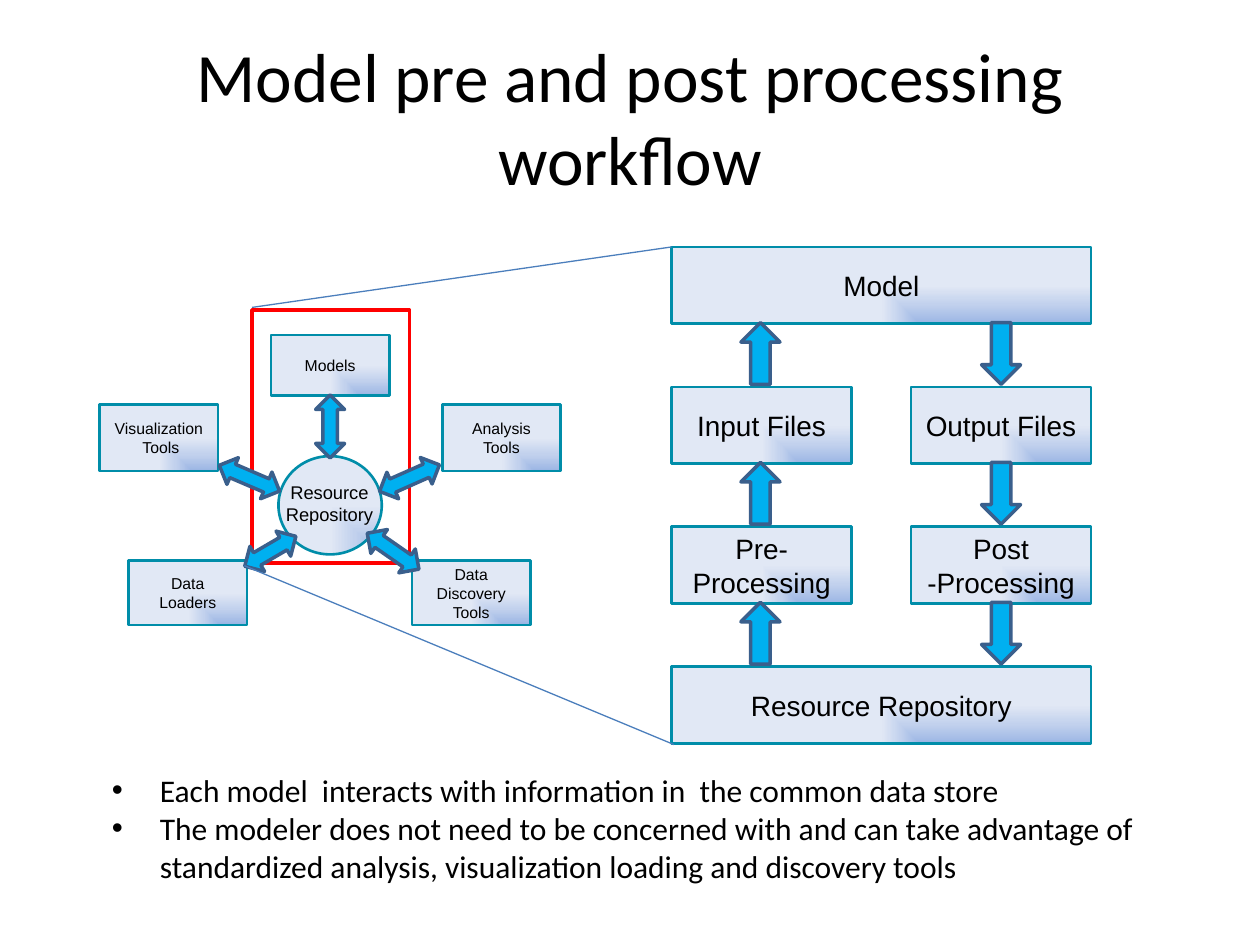
import dataclasses

import lxml.etree
import pptx
import pptx.dml.color
import pptx.enum.shapes
import pptx.enum.text
import pptx.oxml
import pptx.oxml.ns
import pptx.util

Inches = pptx.util.Inches
Pt = pptx.util.Pt
Shape = pptx.enum.shapes.MSO_SHAPE
Align = pptx.enum.text.PP_ALIGN
Anchor = pptx.enum.text.MSO_ANCHOR


@dataclasses.dataclass(frozen=True)
class Theme:
    text: str = "000000"
    box_stops: tuple = ((0, "9AB5E4"), (50, "C2D1ED"), (100, "E1E8F5"))
    box_line: str = "008DA9"
    arrow_fill: str = "00B0F0"
    arrow_line: str = "3A5F8C"
    highlight: str = "FF0000"
    callout: str = "4B7EBC"
    heading_font: str = "Calibri"
    diagram_font: str = "Arial"
    title_size: float = 39.6
    bullet_size: float = 18
    flow_size: float = 16
    hub_size: float = 10.5
    tool_size: float = 9


THEME = Theme()


def color(value):
    return pptx.dml.color.RGBColor.from_string(value)


def apply_format(target, values):
    for name, value in values.items():
        setattr(target, name, value)


def write_text(shape, lines, size, font, alignment=Align.CENTER,
               anchor=Anchor.MIDDLE, margin=0.1):
    frame = shape.text_frame
    apply_format(frame, {
        "word_wrap": True, "vertical_anchor": anchor,
        "margin_left": Inches(margin), "margin_right": Inches(margin),
    })
    frame.text = "\n".join(lines)
    for paragraph in frame.paragraphs:
        paragraph.alignment = alignment
        for run in paragraph.runs:
            apply_format(run.font, {"size": Pt(size), "name": font})
            run.font.color.rgb = color(THEME.text)


def add_text(slide, place, lines, size, font, **options):
    box = slide.shapes.add_textbox(*map(Inches, place))
    write_text(box, lines, size, font, **options)
    return box


def add_bullets(slide, place, lines):
    box = add_text(slide, place, lines, THEME.bullet_size, THEME.heading_font,
                   alignment=Align.LEFT, anchor=Anchor.TOP)
    for paragraph in box.text_frame.paragraphs:
        properties = paragraph._p.get_or_add_pPr()
        properties.set("marL", str(Inches(0.38)))
        properties.set("indent", str(-Inches(0.38)))
        for tag, name, value in (("a:buFont", "typeface", "Arial"), ("a:buChar", "char", "•")):
            bullet = lxml.etree.SubElement(properties, pptx.oxml.ns.qn(tag))
            bullet.set(name, value)


def add_outline(slide, kind, place, line_color, line_width):
    shape = slide.shapes.add_shape(kind, *map(Inches, place))
    shape.shadow.inherit = False
    shape.fill.background()
    shape.line.color.rgb = color(line_color)
    shape.line.width = Pt(line_width)
    return shape


def corner_gradient():
    stops = "".join(
        f'<a:gs pos="{position * 1000}"><a:srgbClr val="{value}"/></a:gs>'
        for position, value in THEME.box_stops)
    return pptx.oxml.parse_xml(
        f'<a:gradFill {pptx.oxml.ns.nsdecls("a")} rotWithShape="1"><a:gsLst>{stops}</a:gsLst>'
        '<a:path path="rect"><a:fillToRect l="100000" t="100000"/></a:path></a:gradFill>')


def add_node(slide, place, label="", size=THEME.flow_size, kind=Shape.RECTANGLE):
    shape = add_outline(slide, kind, place, THEME.box_line, 1.5)
    properties = shape._element.spPr
    properties.replace(properties.find(pptx.oxml.ns.qn("a:noFill")), corner_gradient())
    if label:
        write_text(shape, [label], size, THEME.diagram_font, margin=0.11)


def add_arrow(slide, kind, place, rotation=0):
    shape = add_outline(slide, kind, place, THEME.arrow_line, 2)
    shape.fill.solid()
    shape.fill.fore_color.rgb = color(THEME.arrow_fill)
    shape.rotation = rotation


def add_callout_line(slide, *ends):
    line = slide.shapes.add_connector(
        pptx.enum.shapes.MSO_CONNECTOR.STRAIGHT, *map(Inches, ends))
    line.line.color.rgb = color(THEME.callout)
    line.line.width = Pt(0.75)
    lxml.etree.SubElement(line._element.spPr, pptx.oxml.ns.qn("a:effectLst"))


def add_hub_diagram(slide):
    add_outline(slide, Shape.RECTANGLE, (2, 2.46, 1.25, 2.01), THEME.highlight, 2)
    for left, top, height, label in (
        (3.51, 3.21, 0.53, "Analysis Tools"),
        (0.79, 3.21, 0.53, "Visualization  Tools"),
        (1.02, 4.45, 0.51, "Data Loaders"),
        (3.27, 4.45, 0.51, "Data Discovery Tools"),
        (2.15, 2.66, 0.48, "Models"),
    ):
        add_node(slide, (left, top, 0.94, height), label, THEME.tool_size)
    add_node(slide, (2.21, 3.62, 0.82, 0.78), kind=Shape.OVAL)
    for left, top, width, rotation in (
        (1.91, 4.26, 0.47, 149.7),
        (2.87, 4.26, 0.5, 34.8),
        (2.99, 3.68, 0.52, 336.1),
        (1.72, 3.68, 0.52, 203.2),
        (2.37, 3.27, 0.5, 90),
    ):
        add_arrow(slide, Shape.LEFT_RIGHT_ARROW, (left, top, width, 0.23), rotation)
    add_text(slide, (1.87, 3.77, 1.49, 0.47), ["Resource Repository"],
             THEME.hub_size, THEME.diagram_font, anchor=Anchor.TOP)


def add_flow_diagram(slide):
    left, right, top, pitch, height = 5.33, 7.23, 1.96, 1.11, 0.61
    for row, labels in enumerate((
        ["Model"],
        ["Input Files", "Output Files"],
        ["Pre-Processing", "Post -Processing"],
        ["Resource Repository"],
    )):
        width = 3.33 if len(labels) == 1 else 1.43
        for column, label in zip((left, right), labels):
            add_node(slide, (column, top + row * pitch, width, height), label)
    for gap in range(3):
        arrow_top = top + 0.6 + gap * pitch
        for column, rotation in ((5.88, 180), (7.79, 0)):
            add_arrow(slide, Shape.DOWN_ARROW, (column, arrow_top, 0.31, 0.49), rotation)


def main():
    presentation = pptx.Presentation()
    apply_format(presentation, {"slide_width": Inches(10), "slide_height": Inches(7.5)})
    slide = presentation.slides.add_slide(presentation.slide_layouts[6])
    add_text(slide, (0.5, 0.3, 9, 1.25), ["Model pre and post processing workflow"],
             THEME.title_size, THEME.heading_font)
    add_bullets(slide, (0.79, 6.07, 9.33, 0.95), [
        "Each model  interacts with information in  the common data store",
        "The modeler does not need to be concerned with and can take advantage of "
        "standardized analysis, visualization loading and discovery tools",
    ])
    add_hub_diagram(slide)
    add_flow_diagram(slide)
    add_callout_line(slide, 2, 2.44, 5.33, 1.96)
    add_callout_line(slide, 1.94, 4.49, 5.35, 5.91)
    presentation.save("out.pptx")


if __name__ == "__main__":
    main()
